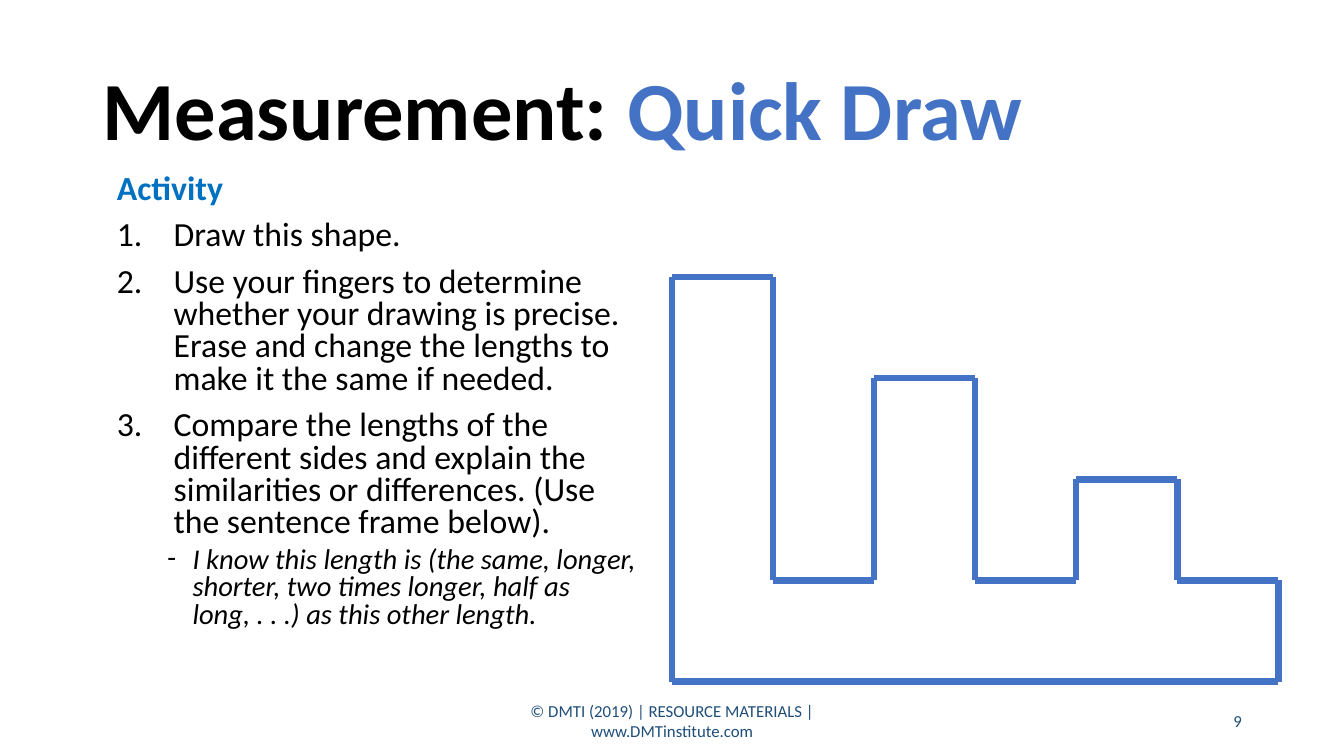
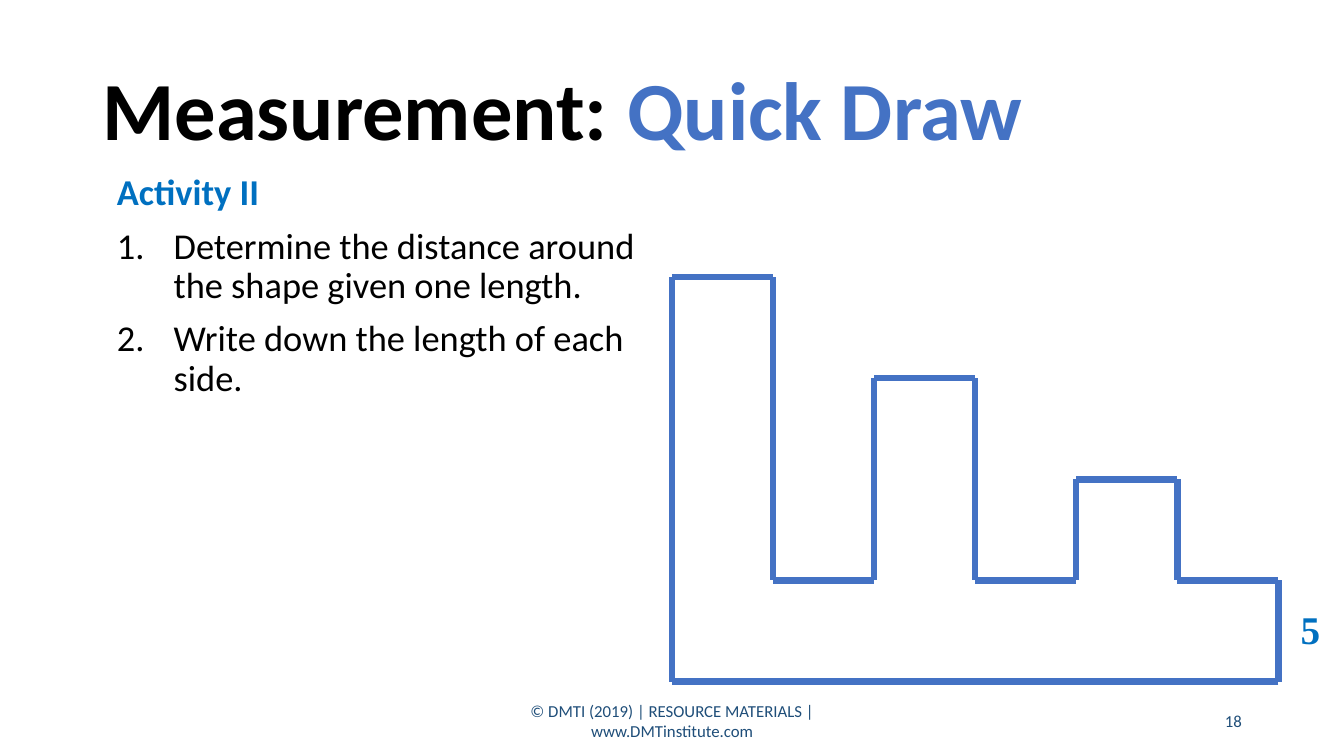
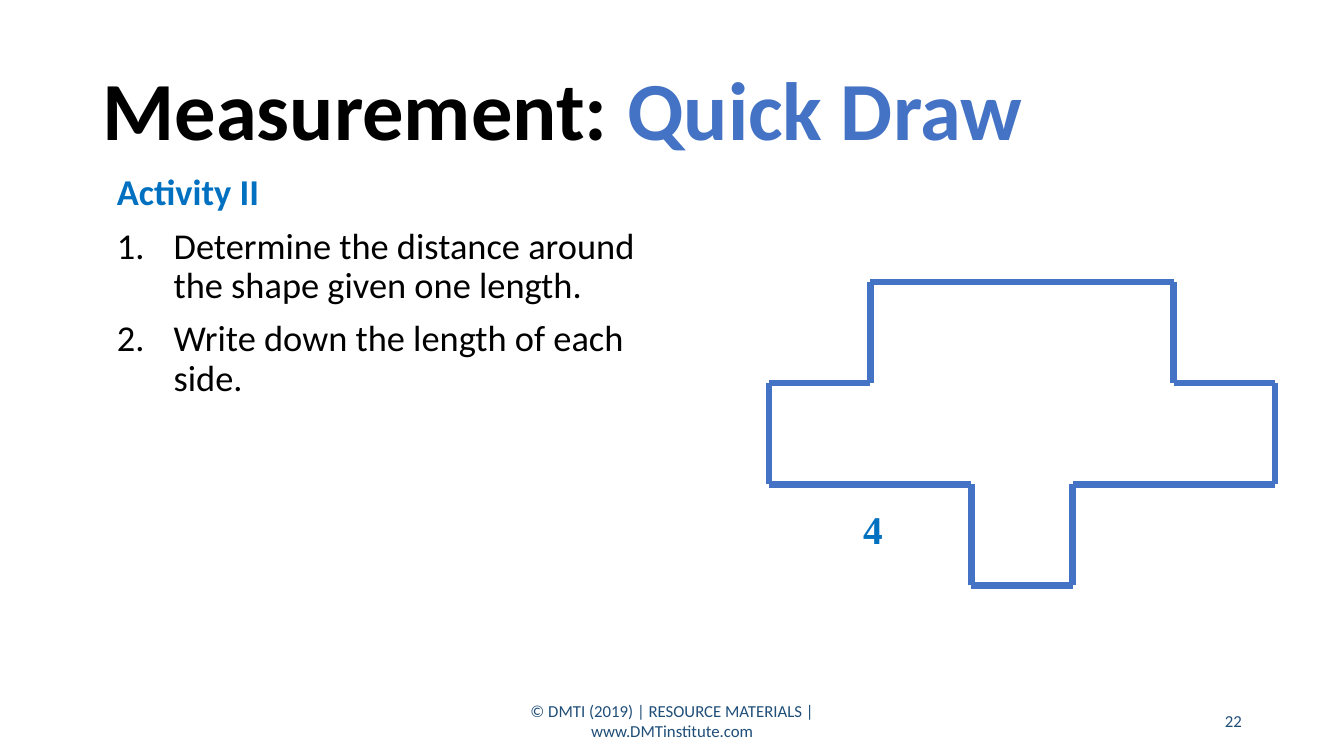
import itertools

import lxml.etree
import pptx
import pptx.dml.color
import pptx.enum.shapes
import pptx.enum.text
import pptx.oxml.ns
import pptx.util

Pt = pptx.util.Pt
RGBColor = pptx.dml.color.RGBColor
ALIGN = pptx.enum.text.PP_ALIGN
ANCHOR = pptx.enum.text.MSO_ANCHOR
qn = pptx.oxml.ns.qn

BLACK = RGBColor(0x00, 0x00, 0x00)
OUTLINE_BLUE = RGBColor(0x44, 0x72, 0xC4)
ACCENT_BLUE = RGBColor(0x00, 0x70, 0xC0)
FOOTER_BLUE = RGBColor(0x1F, 0x4E, 0x79)

FOOTER_TEXT = "© DMTI (2019) | RESOURCE MATERIALS | www.DMTinstitute.com"
GRID_UNIT = 72.2

# Corners in grid units, clockwise from the first top left corner
TOWERS = [(0, 0), (1, 0), (1, 3), (2, 3), (2, 1), (3, 1), (3, 3),
          (4, 3), (4, 2), (5, 2), (5, 3), (6, 3), (6, 4), (0, 4)]
CROSS = [(1, 0), (4, 0), (4, 1), (5, 1), (5, 2), (3, 2),
         (3, 3), (2, 3), (2, 2), (0, 2), (0, 1), (1, 1)]

DRAW_STEPS = [
    "Draw this shape.",
    "Use your fingers to determine whether your drawing is precise. "
    "Erase and change the lengths to make it the same if needed.",
    "Compare the lengths of the different sides and explain the similarities "
    "or differences. (Use the sentence frame below).",
]
SENTENCE_FRAME = ("I know this length is (the same, longer, shorter, two times longer, "
                  "half as long, . . .) as this other length.")
DISTANCE_STEPS = [
    "Determine the distance around the shape given one length.",
    "Write down the length of each side.",
]


class Lesson:
    """Holds the deck, its style and the slide being built."""

    def __init__(self):
        self.deck = pptx.Presentation()
        self.deck.slide_width, self.deck.slide_height = Pt(960), Pt(540)
        self.slide = None

    def add_slide(self, number):
        self.slide = self.deck.slides.add_slide(self.deck.slide_layouts[1])
        self.title()
        self.text(FOOTER_TEXT, (318.2, 500.4, 324, 28.8), 12, FOOTER_BLUE)
        self.text(str(number), (678.2, 500.4, 216, 28.8), 12, FOOTER_BLUE, align=ALIGN.RIGHT)

    @staticmethod
    def place(shape, bounds):
        shape.left, shape.top, shape.width, shape.height = map(Pt, bounds)

    @staticmethod
    def style(para, size, color=None, bold=False, italic=False, font="Calibri"):
        para.font.name, para.font.size = font, Pt(size)
        para.font.bold, para.font.italic = bold, italic
        if color is not None:
            para.font.color.rgb = color

    def title(self):
        box = self.slide.shapes.title
        self.place(box, (66, 29, 828, 104.4))
        frame = box.text_frame
        frame.vertical_anchor = ANCHOR.MIDDLE
        frame.auto_size = pptx.enum.text.MSO_AUTO_SIZE.NONE
        para = frame.paragraphs[0]
        para.alignment, para.line_spacing = ALIGN.LEFT, 0.9
        self.style(para, 59, bold=True)
        for words, color in (("Measurement: ", BLACK), ("Quick Draw", OUTLINE_BLUE)):
            span = para.add_run()
            span.text = words
            span.font.color.rgb = color

    def text(self, words, bounds, size, color, align=ALIGN.CENTER, **look):
        box = self.slide.shapes.add_textbox(*map(Pt, bounds))
        frame = box.text_frame
        frame.word_wrap = True
        frame.vertical_anchor = ANCHOR.MIDDLE
        para = frame.paragraphs[0]
        para.text, para.alignment = words, align
        self.style(para, size, color, **look)

    def length_label(self, words, left, top):
        self.text(words, (left, top, 49, 41), 28, ACCENT_BLUE,
                  bold=True, font="Times New Roman")

    @staticmethod
    def bullet(para, tag, margin, hanging, **attributes):
        properties = para._p.get_or_add_pPr()
        properties.set("marL", str(Pt(margin)))
        properties.set("indent", str(-Pt(hanging)))
        if attributes:
            lxml.etree.SubElement(properties, qn("a:buFont"), typeface="Calibri")
        lxml.etree.SubElement(properties, qn(tag), **attributes)

    def activity(self, heading, steps, size, spacing, sentence_frame=None):
        """Fill the body with a heading, numbered steps and an optional dashed line."""
        box = self.slide.placeholders[1]
        self.place(box, (76.3, 121, 389.5, 343.4))
        frame = box.text_frame
        frame.auto_size = pptx.enum.text.MSO_AUTO_SIZE.NONE

        def add(para, words, space, **look):
            para.text = words
            para.line_spacing, para.space_before = spacing, Pt(space)
            self.style(para, **look)

        para = frame.paragraphs[0]
        self.bullet(para, "a:buNone", 0, 0)
        add(para, heading, 0, size=size, color=ACCENT_BLUE, bold=True)
        for step in steps:
            para = frame.add_paragraph()
            self.bullet(para, "a:buAutoNum", 40.5, 40.5, type="arabicPeriod")
            add(para, step, 10, size=size, color=BLACK)
        if sentence_frame:
            para = frame.add_paragraph()
            para.level = 1
            self.bullet(para, "a:buChar", 54, 18, char="-")
            add(para, sentence_frame, 5, size=20.4, color=BLACK, italic=True)

    def outline(self, corners, left, top):
        """Join the corners, given in grid units, into a closed group of lines."""
        group = self.slide.shapes.add_group_shape()
        points = [(Pt(left + GRID_UNIT * column), Pt(top + GRID_UNIT * row))
                  for column, row in corners]
        for start, end in itertools.pairwise(points + points[:1]):
            side = group.shapes.add_connector(
                pptx.enum.shapes.MSO_CONNECTOR.STRAIGHT, *start, *end)
            side.line.color.rgb = OUTLINE_BLUE
            side.line.width = Pt(4.5)
            lxml.etree.SubElement(side._element.spPr, qn("a:effectLst"))


def main():
    lesson = Lesson()

    lesson.add_slide(9)
    lesson.outline(TOWERS, 480, 198)
    lesson.activity("Activity", DRAW_STEPS, 24.1, 0.8, SENTENCE_FRAME)

    lesson.add_slide(18)
    lesson.activity("Activity II", DISTANCE_STEPS, 26, 0.9)
    lesson.length_label("5", 911.5, 428.4)
    lesson.outline(TOWERS, 480, 198)

    lesson.add_slide(22)
    lesson.activity("Activity II", DISTANCE_STEPS, 26, 0.9)
    lesson.length_label("4", 599, 357)
    lesson.outline(CROSS, 549.5, 201.6)

    lesson.deck.save("out.pptx")


if __name__ == "__main__":
    main()
